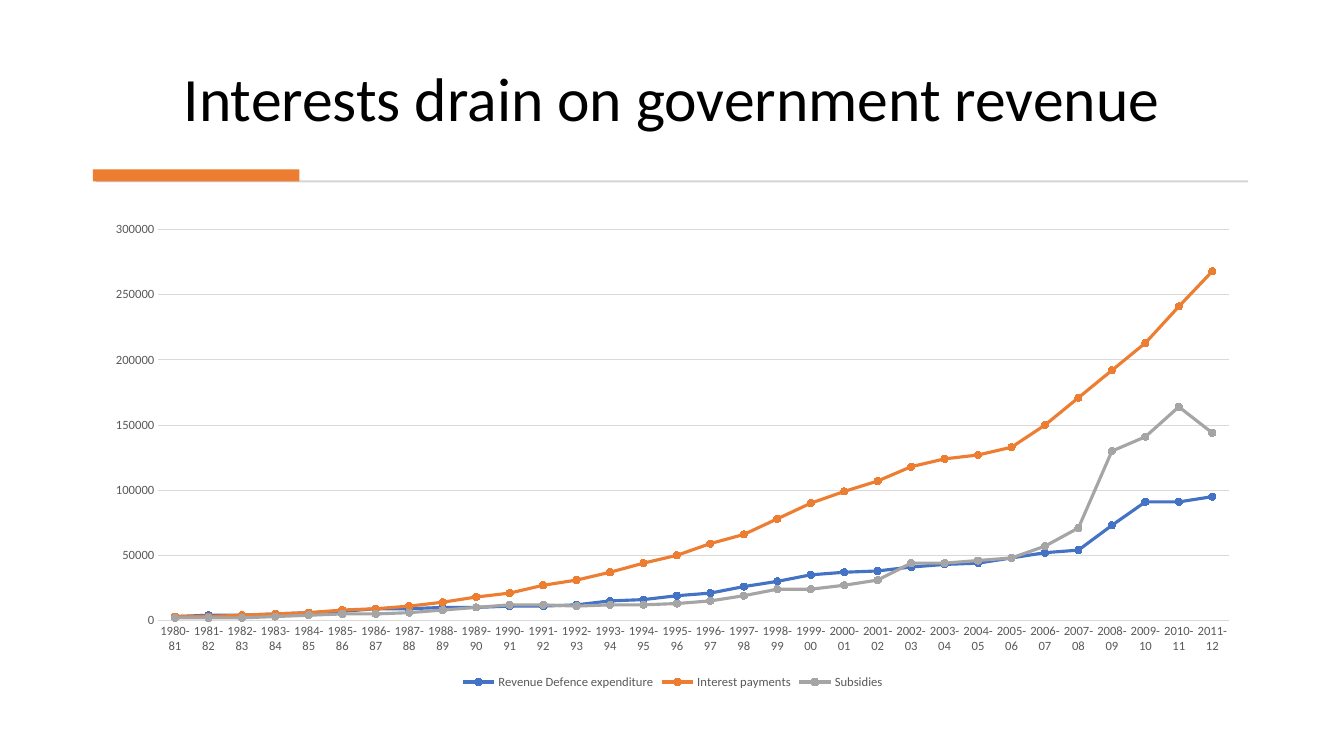
import pptx
import pptx.chart.data
import pptx.dml.color
import pptx.enum.chart
import pptx.enum.shapes
import pptx.enum.text
import pptx.util
from dataclasses import dataclass

Inches = pptx.util.Inches
Pt = pptx.util.Pt

TITLE = "Interests drain on government revenue"
FIRST_YEAR, LAST_YEAR = 1980, 2011
# Values in thousands, one per fiscal year
SERIES = {
    "Revenue Defence expenditure": [
        3, 4, 4, 5, 6, 7, 9, 9, 10, 10, 11, 11, 12, 15, 16, 19,
        21, 26, 30, 35, 37, 38, 41, 43, 44, 48, 52, 54, 73, 91, 91, 95],
    "Interest payments": [
        3, 3, 4, 5, 6, 8, 9, 11, 14, 18, 21, 27, 31, 37, 44, 50,
        59, 66, 78, 90, 99, 107, 118, 124, 127, 133, 150, 171, 192, 213, 241, 268],
    "Subsidies": [
        2, 2, 2, 3, 4, 5, 5, 6, 8, 10, 12, 12, 11, 12, 12, 13,
        15, 19, 24, 24, 27, 31, 44, 44, 46, 48, 57, 71, 130, 141, 164, 144],
}
TITLE_BOX = (0.92, 0.28, 11.49, 1.11)
RULE_BOX = (0.95, 1.79, 11.43, 0.02)
ACCENT_BOX = (0.92, 1.68, 2.05, 0.12)
CHART_BOX = (0.92, 2.11, 11.5, 4.77)


@dataclass(frozen=True)
class Theme:
    font: str = "Calibri"
    title: str = "000000"
    label: str = "595959"
    grid: str = "D9D9D9"
    rule: str = "D5D5D5"
    accent: str = "ED7D31"
    series: tuple = ("4472C4", "ED7D31", "A5A5A5")
    title_size: int = 44
    label_size: int = 9
    chart_size: int = 10


THEME = Theme()


def rgb(color):
    return pptx.dml.color.RGBColor.from_string(color)


def set_font(font, size, color):
    font.name, font.size = THEME.font, Pt(size)
    font.color.rgb = rgb(color)


def set_line(line, color, width):
    line.color.rgb = rgb(color)
    line.width = Pt(width)


def add_title(slide):
    sp = slide.shapes.title
    sp.left, sp.top, sp.width, sp.height = map(Inches, TITLE_BOX)
    tf = sp.text_frame
    tf.text = TITLE
    tf.word_wrap = True
    tf.auto_size = pptx.enum.text.MSO_AUTO_SIZE.NONE
    tf.vertical_anchor = pptx.enum.text.MSO_ANCHOR.BOTTOM
    p = tf.paragraphs[0]
    p.alignment = pptx.enum.text.PP_ALIGN.CENTER
    p.line_spacing = 0.9
    set_font(p.runs[0].font, THEME.title_size, THEME.title)


def add_bar(slide, box, color):
    sp = slide.shapes.add_shape(
        pptx.enum.shapes.MSO_SHAPE.RECTANGLE, *map(Inches, box))
    sp.shadow.inherit = False
    sp.fill.solid()
    sp.fill.fore_color.rgb = rgb(color)
    sp.line.fill.background()


def add_line_chart(slide):
    data = pptx.chart.data.CategoryChartData()
    data.categories = [f"{year}-{(year + 1) % 100:02d}"
                       for year in range(FIRST_YEAR, LAST_YEAR + 1)]
    for name, thousands in SERIES.items():
        data.add_series(name, [value * 1000 for value in thousands])
    chart = slide.shapes.add_chart(
        pptx.enum.chart.XL_CHART_TYPE.LINE_MARKERS,
        *map(Inches, CHART_BOX), data).chart
    chart.has_title = False
    set_font(chart.font, THEME.chart_size, THEME.title)
    style_axes(chart)
    style_series(chart.plots[0])

    chart.has_legend = True
    chart.legend.position = pptx.enum.chart.XL_LEGEND_POSITION.BOTTOM
    chart.legend.include_in_layout = False
    set_font(chart.legend.font, THEME.label_size, THEME.label)


def style_axes(chart):
    no_tick = pptx.enum.chart.XL_TICK_MARK.NONE
    for axis in (chart.category_axis, chart.value_axis):
        axis.major_tick_mark = axis.minor_tick_mark = no_tick
        set_font(axis.tick_labels.font, THEME.label_size, THEME.label)
    set_line(chart.category_axis.format.line, THEME.grid, 0.75)
    values = chart.value_axis
    values.minimum_scale, values.maximum_scale, values.major_unit = 0, 300000, 50000
    values.format.line.fill.background()
    values.has_major_gridlines = True
    set_line(values.major_gridlines.format.line, THEME.grid, 0.75)


def style_series(plot):
    plot.vary_by_categories = False
    for series, color in zip(plot.series, THEME.series):
        series.smooth = False
        set_line(series.format.line, color, 2.25)
        marker = series.marker
        marker.style = pptx.enum.chart.XL_MARKER_STYLE.CIRCLE
        marker.size = 5
        marker.format.fill.solid()
        marker.format.fill.fore_color.rgb = rgb(color)
        set_line(marker.format.line, color, 0.75)


def main():
    prs = pptx.Presentation()
    prs.slide_width, prs.slide_height = Inches(13.33), Inches(7.5)
    slide = prs.slides.add_slide(prs.slide_layouts.get_by_name("Title Only"))
    add_title(slide)
    add_bar(slide, RULE_BOX, THEME.rule)
    add_bar(slide, ACCENT_BOX, THEME.accent)
    add_line_chart(slide)
    prs.save("out.pptx")


if __name__ == "__main__":
    main()
